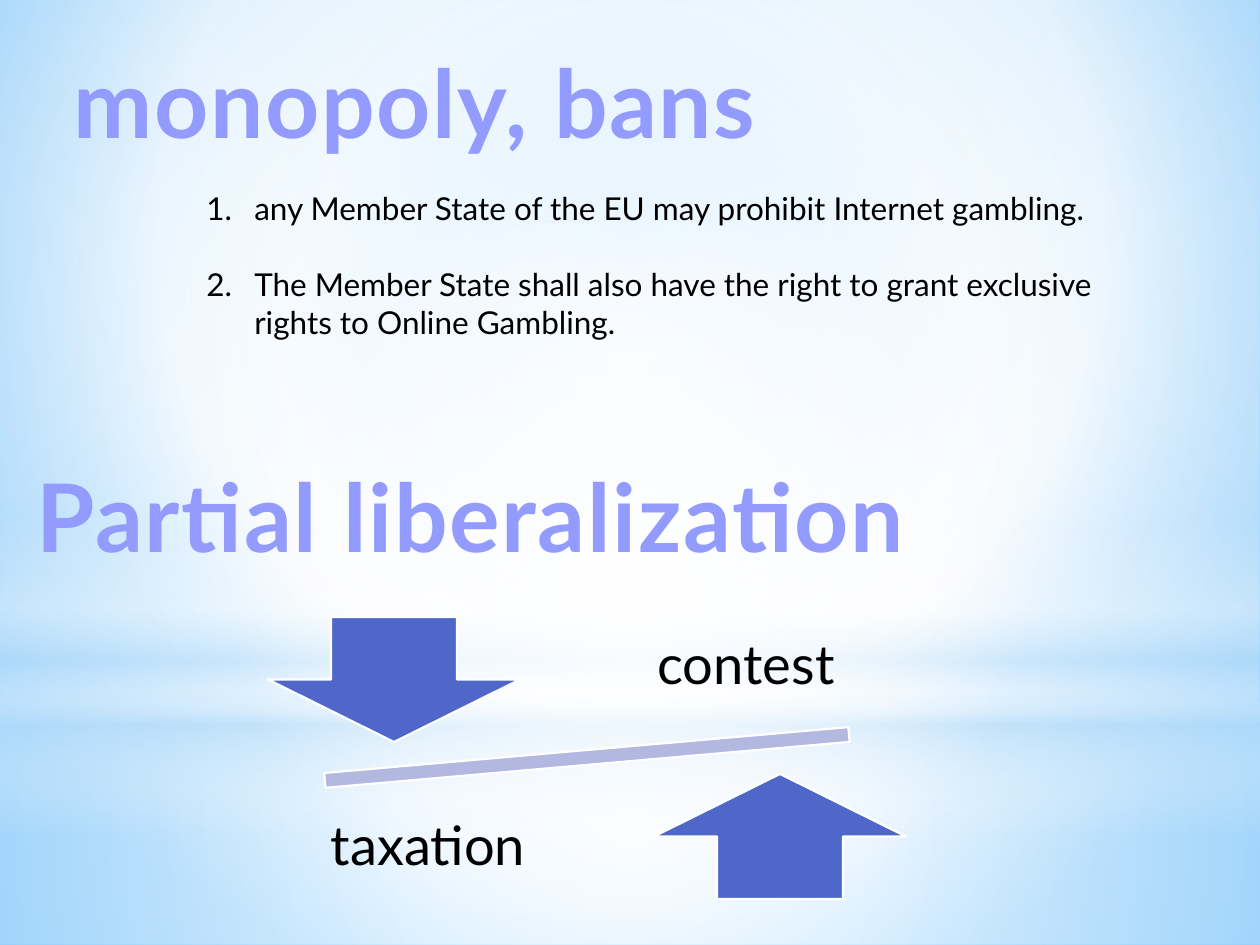
"""Build the slide on gambling monopolies, bans and partial liberalization."""
from typing import NamedTuple, Optional

import pptx
import pptx.dml.color
import pptx.enum.dml
import pptx.enum.shapes
import pptx.enum.text
import pptx.oxml
import pptx.oxml.ns
import pptx.util
from lxml import etree

RGB = pptx.dml.color.RGBColor
SHAPE = pptx.enum.shapes.MSO_SHAPE
ALIGN = pptx.enum.text.PP_ALIGN
ANCHOR = pptx.enum.text.MSO_ANCHOR
AUTO_SIZE = pptx.enum.text.MSO_AUTO_SIZE
qn = pptx.oxml.ns.qn

WHITE = RGB(0xFF, 0xFF, 0xFF)
BLACK = RGB(0x00, 0x00, 0x00)
PALE_BLUE = RGB(0xB4, 0xDC, 0xFA)
SKY = RGB(0x9E, 0xD5, 0xFF)
DEEP_SKY = RGB(0x5B, 0xB9, 0xFF)
HEADING_FILL = RGB(0x17, 0x47, 0xFF)
HEADING_OUTLINE = RGB(0x93, 0x9B, 0xFF)
ARROW_BLUE = RGB(0x4E, 0x67, 0xC8)
BEAM_LILAC = RGB(0xB2, 0xB8, 0xE0)
FONT = "Lato"
PX_PER_INCH = 126


class Box(NamedTuple):
    left: int
    top: int
    width: int
    height: int


class Stop(NamedTuple):
    position: int
    color: RGB
    alpha: int = 100


class Glow(NamedTuple):
    kind: SHAPE
    box: Box
    stops: tuple[Stop, ...]
    focus: Optional[tuple[int, int, int, int]] = (50, 50, 50, 50)


class Part(NamedTuple):
    kind: SHAPE
    box: Box
    color: RGB
    rotation: int = 0


class Label(NamedTuple):
    text: str
    box: Box


BACKDROP = (Stop(0, SKY), Stop(60, WHITE), Stop(100, DEEP_SKY))
GLOWS = (
    Glow(SHAPE.RECTANGLE, Box(0, 703, 1260, 242),
         (Stop(0, WHITE, 91), Stop(37, WHITE, 76), Stop(100, PALE_BLUE, 79))),
    Glow(SHAPE.RECTANGLE, Box(0, 0, 1260, 703),
         (Stop(0, WHITE, 89), Stop(48, WHITE, 62), Stop(100, PALE_BLUE, 79))),
    Glow(SHAPE.RECTANGLE, Box(0, 519, 1260, 315),
         (Stop(0, WHITE, 0), Stop(29, WHITE, 30), Stop(45, PALE_BLUE, 40),
          Stop(55, WHITE, 26), Stop(65, PALE_BLUE, 60), Stop(100, WHITE, 0)), None),
    Glow(SHAPE.OVAL, Box(0, 220, 1260, 703), (Stop(0, WHITE), Stop(56, WHITE, 0))),
)
RULES = (
    "any Member State of the EU may prohibit Internet gambling.",
    "The Member State shall also have the right to grant exclusive rights to Online Gambling.",
)
SEESAW = (
    Part(SHAPE.MATH_MINUS, Box(229, 726, 716, 63), BEAM_LILAC, 355),
    Part(SHAPE.DOWN_ARROW, Box(268, 617, 252, 125), ARROW_BLUE),
    Part(SHAPE.UP_ARROW, Box(654, 774, 252, 125), ARROW_BLUE),
)
LABELS = (
    Label("contest", Box(612, 601, 268, 131)),
    Label("taxation", Box(294, 782, 268, 131)),
)


def px(length: int) -> int:
    return round(length * pptx.util.Inches(1) / PX_PER_INCH)


def emu(box: Box) -> list[int]:
    return [px(length) for length in box]


def set_gradient(owner, fill, stops: tuple[Stop, ...], focus) -> None:
    fill.gradient()
    gradient = next(owner.iter(qn("a:gradFill")))
    for child in list(gradient):
        gradient.remove(child)
    stop_list = etree.SubElement(gradient, qn("a:gsLst"))
    for stop in stops:
        mark = etree.SubElement(stop_list, qn("a:gs"), pos=str(stop.position * 1000))
        color = etree.SubElement(mark, qn("a:srgbClr"), val=str(stop.color))
        if stop.alpha < 100:
            etree.SubElement(color, qn("a:alpha"), val=str(stop.alpha * 1000))
    if focus is None:
        etree.SubElement(gradient, qn("a:lin"), ang="5400000", scaled="0")
        return
    circle = etree.SubElement(gradient, qn("a:path"), path="circle")
    sides = {side: str(value * 1000) for side, value in zip("ltrb", focus)}
    etree.SubElement(circle, qn("a:fillToRect"), **sides)


def draw_glow(slide, glow: Glow) -> None:
    shape = slide.shapes.add_shape(glow.kind, *emu(glow.box))
    shape.shadow.inherit = False
    shape.line.fill.background()
    set_gradient(shape.element, shape.fill, glow.stops, glow.focus)


def draw_part(slide, part: Part) -> None:
    shape = slide.shapes.add_shape(part.kind, *emu(part.box))
    shape.shadow.inherit = False
    shape.rotation = part.rotation
    shape.fill.solid()
    shape.fill.fore_color.rgb = part.color
    shape.line.color.rgb = WHITE
    shape.line.width = pptx.util.Pt(1.25)


def add_run(paragraph, text: str, size: int, color: RGB):
    run = paragraph.add_run()
    run.text = text
    run.font.name = FONT
    run.font.size = pptx.util.Pt(size)
    run.font.color.rgb = color
    return run


def write_heading(holder, text: str, box: Box, align: ALIGN, wrap: bool) -> None:
    holder.left, holder.top, holder.width, holder.height = emu(box)
    frame = holder.text_frame
    frame.word_wrap = wrap
    frame.auto_size = AUTO_SIZE.SHAPE_TO_FIT_TEXT
    frame.vertical_anchor = ANCHOR.TOP
    paragraph = frame.paragraphs[0]
    paragraph.alignment = align
    run = add_run(paragraph, text, 54, HEADING_FILL)
    run.font.bold = True
    properties = run.font._element
    properties.set("spc", "100")
    fill_color = next(properties.iter(qn("a:srgbClr")))
    etree.SubElement(fill_color, qn("a:alpha"), val="6000")
    outline = etree.Element(qn("a:ln"), w=str(pptx.util.Pt(1.42)))
    outline_fill = etree.SubElement(outline, qn("a:solidFill"))
    etree.SubElement(outline_fill, qn("a:srgbClr"), val=str(HEADING_OUTLINE))
    properties.insert(0, outline)


def write_rules(slide, rules: tuple[str, ...], box: Box) -> None:
    frame = slide.shapes.add_textbox(*emu(box)).text_frame
    frame.word_wrap = True
    frame.auto_size = AUTO_SIZE.SHAPE_TO_FIT_TEXT
    indent = pptx.util.Inches(0.38)
    for index, rule in enumerate(rules):
        paragraph = frame.add_paragraph() if index else frame.paragraphs[0]
        paragraph.space_after = pptx.util.Pt(21.6)
        add_run(paragraph, rule, 18, BLACK)
        properties = paragraph._p.get_or_add_pPr()
        properties.set("marL", str(indent))
        properties.set("indent", str(-indent))
        etree.SubElement(properties, qn("a:buAutoNum"), type="arabicPeriod")


def write_label(slide, label: Label) -> None:
    frame = slide.shapes.add_textbox(*emu(label.box)).text_frame
    frame.word_wrap = True
    frame.vertical_anchor = ANCHOR.MIDDLE
    inset = pptx.util.Inches(0.24)
    frame.margin_left = frame.margin_right = frame.margin_top = frame.margin_bottom = inset
    paragraph = frame.paragraphs[0]
    paragraph.alignment = ALIGN.CENTER
    paragraph.line_spacing = 0.9
    add_run(paragraph, label.text, 31, BLACK)


def main() -> None:
    deck = pptx.Presentation()
    deck.slide_width, deck.slide_height = px(1260), px(945)
    slide = deck.slides.add_slide(deck.slide_layouts[5])
    set_gradient(slide.element, slide.background.fill, BACKDROP, (20, 10, 20, 60))
    title = slide.shapes.title
    for glow in GLOWS:
        draw_glow(slide, glow)
    slide.shapes.element.append(title.element)
    write_heading(title, "monopoly, bans", Box(44, 38, 742, 127), ALIGN.CENTER, False)
    write_rules(slide, RULES, Box(194, 183, 992, 165))
    liberalization_box = Box(24, 452, 1235, 127)
    liberalization = slide.shapes.add_textbox(*emu(liberalization_box))
    write_heading(liberalization, "Partial liberalization", liberalization_box, ALIGN.LEFT, True)
    for part in SEESAW:
        draw_part(slide, part)
    for label in LABELS:
        write_label(slide, label)
    deck.save("out.pptx")


if __name__ == "__main__":
    main()
